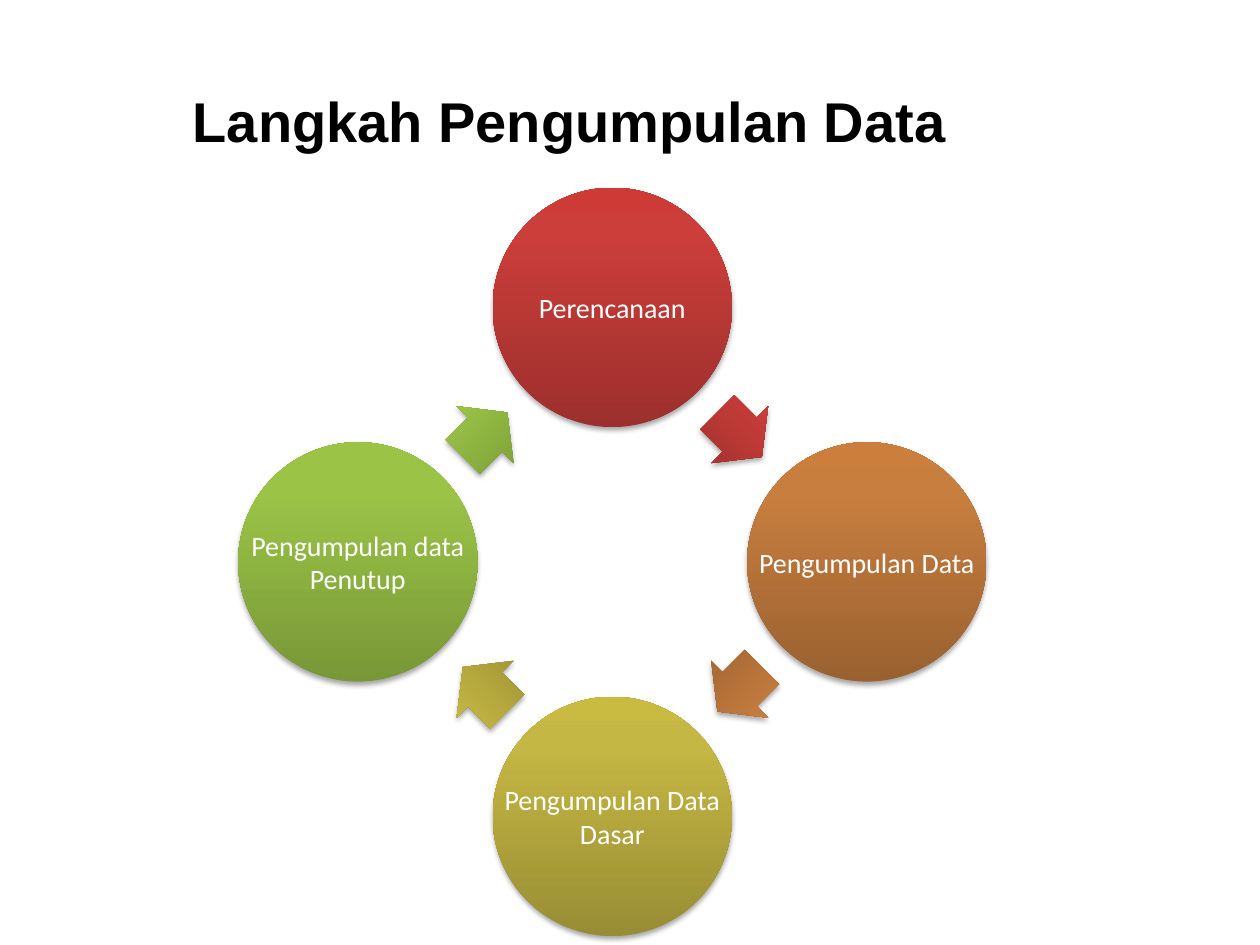
"""Build a slide with a four-step data collection cycle."""
from lxml import etree
from pptx import Presentation
from pptx.dml.color import RGBColor
from pptx.enum.shapes import MSO_SHAPE as SHAPE
from pptx.enum.text import MSO_ANCHOR as ANCHOR, MSO_AUTO_SIZE as AUTO, PP_ALIGN as ALIGN
from pptx.oxml import parse_xml
from pptx.oxml.ns import nsdecls, qn
from pptx.util import Inches, Pt

BLACK = RGBColor(0x00, 0x00, 0x00)
WHITE = RGBColor(0xFF, 0xFF, 0xFF)
RED = [RGBColor(0x9C, 0x2F, 0x2D), RGBColor(0xCB, 0x3E, 0x3A), RGBColor(0xCE, 0x3B, 0x37)]
ORANGE = [RGBColor(0x9A, 0x61, 0x30), RGBColor(0xC8, 0x7E, 0x3F), RGBColor(0xCC, 0x7E, 0x3C)]
YELLOW = [RGBColor(0x98, 0x8D, 0x34), RGBColor(0xC5, 0xB7, 0x43), RGBColor(0xC9, 0xBA, 0x41)]
GREEN = [RGBColor(0x78, 0x97, 0x37), RGBColor(0x9B, 0xC4, 0x47), RGBColor(0x9D, 0xC7, 0x45)]

STEPS = [
    ("Perencanaan", RED, (0, -1)),
    ("Pengumpulan Data", ORANGE, (1, 0)),
    ("Pengumpulan Data Dasar", YELLOW, (0, 1)),
    ("Pengumpulan data Penutup", GREEN, (-1, 0)),
]
CX, CY, RADIUS = 4.86, 4.46, 2.02
CIRCLE, ARROW_W, ARROW_H = 1.9, 0.5, 0.64


def box(x, y, w, h):
    return [Inches(v) for v in (x - w / 2, y - h / 2, w, h)]


def paint(sp, colors):
    sp.line.fill.background()
    sp.fill.gradient()
    sp.fill.gradient_angle = 90
    sp_pr = sp._element.spPr
    stops = sp_pr.find(qn("a:gradFill")).find(qn("a:gsLst"))
    for gs in list(stops):
        stops.remove(gs)
    for pos, color in zip((0, 80000, 100000), colors):
        gs = etree.SubElement(stops, qn("a:gs"), pos=str(pos))
        etree.SubElement(gs, qn("a:srgbClr"), val=str(color))
    sp_pr.append(parse_xml(
        f'<a:effectLst {nsdecls("a")}>'
        f'<a:outerShdw blurRad="{Pt(3.1)}" dist="{Pt(1.8)}" dir="5400000" rotWithShape="0">'
        '<a:srgbClr val="000000"><a:alpha val="35000"/></a:srgbClr>'
        '</a:outerShdw></a:effectLst>'))


prs = Presentation()
prs.slide_width, prs.slide_height = Inches(10), Inches(7.5)
s = prs.slides.add_slide(prs.slide_layouts[0])
subtitle = s.placeholders[1]._element
subtitle.getparent().remove(subtitle)

title = s.shapes.title
title.left, title.top, title.width, title.height = [Inches(v) for v in (1.53, 0.69, 6.94, 0.54)]
tf = title.text_frame
tf.margin_left = tf.margin_right = tf.margin_top = tf.margin_bottom = 0
tf.vertical_anchor = ANCHOR.TOP
tf.auto_size = AUTO.SHAPE_TO_FIT_TEXT
p = tf.paragraphs[0]
p.alignment = ALIGN.LEFT
r = p.add_run()
r.text = "Langkah Pengumpulan Data"
r.font.name, r.font.size, r.font.bold = "Arial", Pt(32), True
r.font.color.rgb = BLACK

cycle = s.shapes.add_group_shape().shapes
for i, (label, colors, (dx, dy)) in enumerate(STEPS):
    x, y = CX + dx * RADIUS, CY + dy * RADIUS
    sp = cycle.add_shape(SHAPE.OVAL, *box(x, y, CIRCLE, CIRCLE))
    paint(sp, colors)

    tf = cycle.add_textbox(*box(x, y, CIRCLE, CIRCLE)).text_frame
    tf.word_wrap = True
    tf.vertical_anchor = ANCHOR.MIDDLE
    tf.margin_left = tf.margin_right = tf.margin_top = tf.margin_bottom = Inches(0.02)
    p = tf.paragraphs[0]
    p.alignment = ALIGN.CENTER
    p.space_after = Pt(5.6)
    r = p.add_run()
    r.text = label
    r.font.name, r.font.size = "Calibri", Pt(16)
    r.font.color.rgb = WHITE

    next_dx, next_dy = STEPS[(i + 1) % len(STEPS)][2]
    mid_x = CX + (dx + next_dx) * RADIUS / 2
    mid_y = CY + (dy + next_dy) * RADIUS / 2
    sp = cycle.add_shape(SHAPE.RIGHT_ARROW, *box(mid_x, mid_y, ARROW_W, ARROW_H))
    sp.adjustments[0], sp.adjustments[1] = 0.6, 0.5
    sp.rotation = 45 + 90 * i
    paint(sp, colors)

prs.save("out.pptx")
